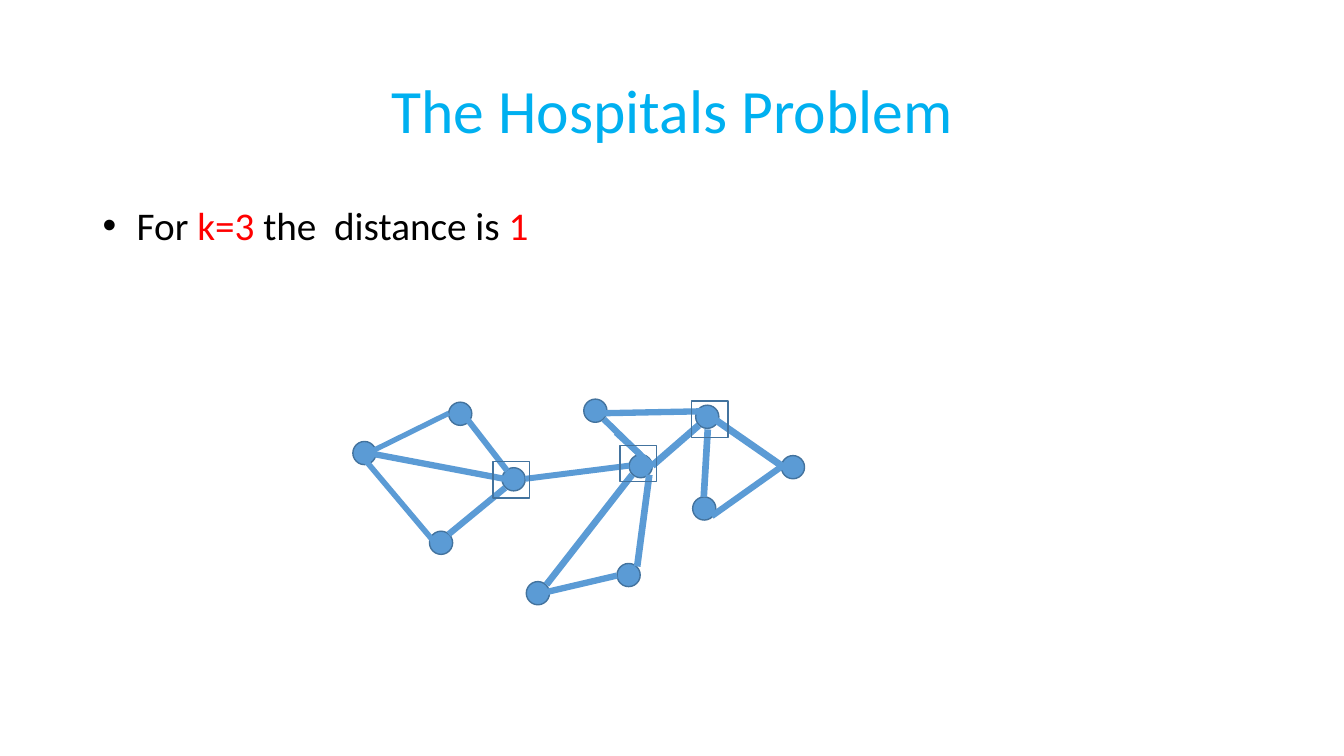
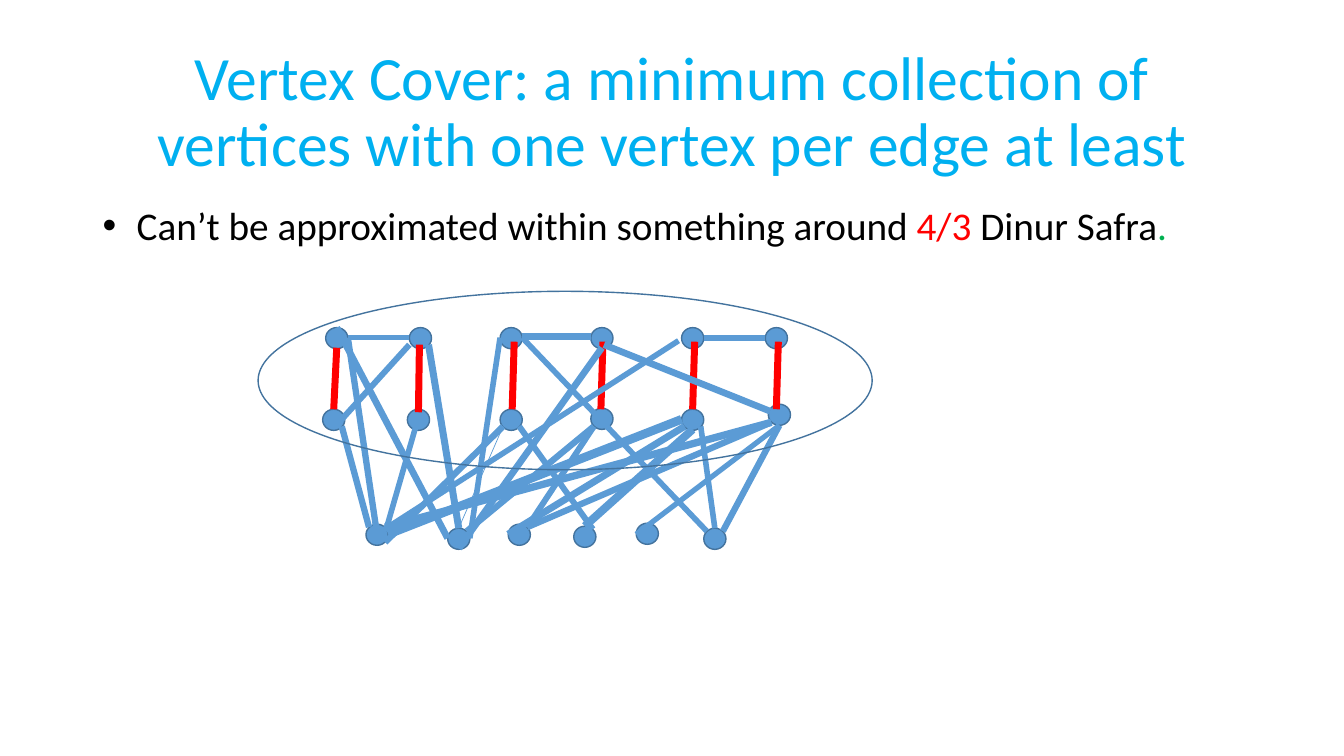
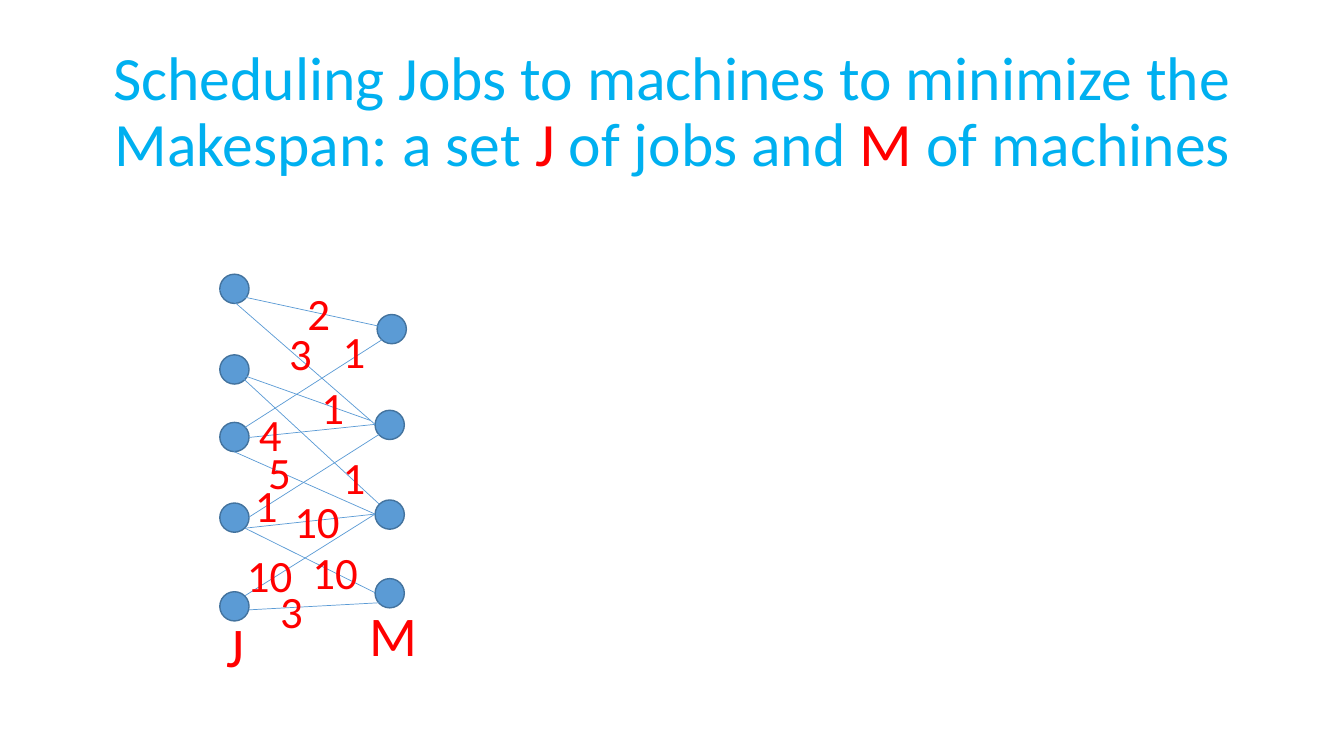
from lxml import etree
from pptx import Presentation, util as u
from pptx.dml import color
from pptx.enum import shapes, text
from pptx.oxml import ns

COLS, ROWS = 1333, 750
WIDTH, HEIGHT = u.Inches(13.33), u.Inches(7.5)
FONT = "Calibri"
SKY, RED, GREEN, BLACK = "00B0F0", "FF0000", "00B050", "000000"
BLUE, NAVY = "5B9BD5", "43739E"
CONTENT_LEFT, CONTENT_WIDTH = 92, 1150
LABEL_WIDTH = 372

HOSPITAL_NODES = [(350, 438), (445, 399), (426, 527), (498, 464), (579, 396), (612, 559),
                  (690, 402), (687, 493), (624, 451), (775, 452), (522, 577)]
HOSPITAL_SITES = [(686, 398), (489, 458), (615, 442)]
HOSPITAL_EDGES = [
    (362, 451, 445, 410, 3.75), (361, 455, 436, 544, 4), (462, 414, 503, 467, 4.25),
    (445, 530, 501, 484, 4.5), (363, 449, 500, 475, 4.5), (627, 471, 542, 580, 4.75),
    (644, 471, 632, 562, 4.75), (535, 589, 612, 571, 4.5), (706, 414, 778, 464, 5),
    (596, 410, 698, 408, 4.5), (706, 512, 775, 463, 4.5), (599, 416, 635, 451, 4.5),
    (647, 462, 693, 422, 5), (702, 426, 698, 493, 4.75), (521, 475, 624, 462, 4.25),
    (611, 429, 648, 463, 4.5)]

COVER_NODES = [(col, 325) for col in (323, 406, 496, 586, 676, 759)] + [
    (320, 406), (404, 406), (496, 406), (586, 405), (676, 406), (762, 401)]
OUTSIDE_NODES = [(363, 520), (444, 524), (504, 520), (569, 522), (631, 519), (698, 524)]
MATCHING = [(334, 345, 331, 406, 5), (415, 409, 416, 342, 5)] + [
    (col, 406, col + 2, 339, 5) for col in (508, 596, 687, 770)]
COVER_EDGES = [
    (366, 523, 339, 423, 4.5), (374, 530, 345, 335, 4.5), (382, 538, 499, 423, 4.5),
    (383, 525, 413, 421, 4), (385, 530, 676, 416, 6.25), (380, 526, 673, 338, 4),
    (382, 523, 765, 419, 5.25), (444, 534, 334, 325, 4.75), (455, 524, 425, 342, 5),
    (466, 534, 496, 335, 4), (455, 524, 499, 423, 0.5), (463, 527, 589, 423, 4.5),
    (455, 544, 597, 345, 4.75), (523, 523, 589, 423, 4.25), (504, 530, 679, 423, 5),
    (523, 523, 765, 419, 4.5), (588, 525, 515, 423, 4.25), (580, 522, 687, 426, 5.75),
    (701, 527, 518, 335, 4), (709, 524, 695, 423, 4), (717, 527, 773, 422, 4.5),
    (599, 342, 764, 408, 4.75), (339, 416, 406, 342, 4.25), (345, 335, 406, 335, 3.75),
    (518, 334, 586, 334, 5.25), (698, 335, 759, 335, 4.5), (631, 530, 773, 422, 3.75)]

JOBS = [(218, row) for row in (272, 352, 419, 499, 587)]
MACHINES = [(374, 312)] + [(372, row) for row in (407, 496, 574)]
JOB_EDGES = [(*ends, 0.5) for ends in (
    (239, 294, 387, 326), (243, 591, 372, 510), (232, 369, 367, 417), (243, 424, 379, 337),
    (247, 513, 376, 431), (232, 448, 372, 510), (247, 605, 376, 598), (243, 524, 372, 588),
    (247, 434, 372, 421), (218, 287, 372, 421), (232, 367, 376, 500), (243, 524, 372, 510))]
TIMES = [("2", 295, 279), ("3", 277, 318), ("1", 309, 372), ("4", 247, 399), ("1", 330, 316),
         ("1", 330, 441), ("5", 256, 436), ("1", 243, 469), ("10", 282, 485),
         ("10", 235, 538), ("10", 300, 536), ("3", 268, 574)]
SET_NAMES = [("J", 215, 602), ("M", 357, 591)]


def rgb(value):
    """Turn a hex string into a colour."""
    return color.RGBColor.from_string(value)


def grid(*cells):
    """Turn alternating columns and rows into slide lengths."""
    return [int(WIDTH * c / COLS) if i % 2 == 0 else int(HEIGHT * c / ROWS)
            for i, c in enumerate(cells)]


def add_text(s, cells, runs, size):
    """Add a wrapped text box with one paragraph of coloured runs."""
    tf = s.shapes.add_textbox(*grid(*cells)).text_frame
    tf.word_wrap = True
    p = tf.paragraphs[0]
    for words, hue in runs:
        r = p.add_run()
        r.text = words
        r.font.name, r.font.size = FONT, u.Pt(size)
        r.font.color.rgb = rgb(hue)
    return tf


def add_title(s, *runs):
    """Add the centred slide title."""
    tf = add_text(s, (CONTENT_LEFT, 40, CONTENT_WIDTH, 145), runs, 44)
    tf.vertical_anchor = text.MSO_ANCHOR.MIDDLE
    p = tf.paragraphs[0]
    p.alignment, p.line_spacing = text.PP_ALIGN.CENTER, 0.9


def add_bullet(s, *runs):
    """Add the body text as one bulleted paragraph."""
    tf = add_text(s, (CONTENT_LEFT, 200, CONTENT_WIDTH, 476), runs, 28)
    p = tf.paragraphs[0]
    p.line_spacing, p.space_before = 0.9, u.Pt(10)
    pPr = p._p.get_or_add_pPr()
    indent = u.Inches(0.25)
    pPr.set("marL", str(indent))
    pPr.set("indent", str(-indent))
    etree.SubElement(pPr, ns.qn("a:buFont")).set("typeface", "Arial")
    etree.SubElement(pPr, ns.qn("a:buChar")).set("char", "•")


def add_labels(s, labels, size, height):
    """Add red labels, each given as words, column and row."""
    for words, col, row in labels:
        tf = add_text(s, (col, row, LABEL_WIDTH, height), [(words, RED)], size)
        tf.auto_size = text.MSO_AUTO_SIZE.SHAPE_TO_FIT_TEXT


def add_outline(s, kind, cells, fill=None):
    """Add a navy-edged shape, filled only when a colour is given."""
    sp = s.shapes.add_shape(kind, *grid(*cells))
    sp.shadow.inherit = False
    sp.line.color.rgb, sp.line.width = rgb(NAVY), u.Pt(1)
    if fill:
        sp.fill.solid()
        sp.fill.fore_color.rgb = rgb(fill)
    else:
        sp.fill.background()


def add_nodes(s, corners, width, height):
    """Add equal graph vertices at the given corners."""
    for corner in corners:
        add_outline(s, shapes.MSO_SHAPE.OVAL, (*corner, width, height), BLUE)


def add_edges(s, edges, hue=BLUE):
    """Add graph edges, each given as two ends and a weight."""
    for *ends, weight in edges:
        cx = s.shapes.add_connector(shapes.MSO_CONNECTOR.STRAIGHT, *grid(*ends))
        cx.line.color.rgb, cx.line.width = rgb(hue), u.Pt(weight)
        etree.SubElement(cx._element.spPr, ns.qn("a:effectLst"))


def hospitals_slide(s):
    """Draw the hospitals graph with its three sites."""
    add_title(s, ("The Hospitals Problem", SKY))
    add_bullet(s, (" For ", BLACK), ("k=3", RED), (" the  distance is ", BLACK), ("1", RED))
    add_nodes(s, HOSPITAL_NODES, 23, 23)
    add_edges(s, HOSPITAL_EDGES)
    for site in HOSPITAL_SITES:
        add_outline(s, shapes.MSO_SHAPE.RECTANGLE, (*site, 36, 36))


def cover_slide(s):
    """Draw the matching and the vertex cover around it."""
    add_title(s, ("Vertex Cover: a minimum collection of vertices "
                  "with one vertex per edge at least", SKY))
    add_bullet(s, (" Can’t be approximated within something around ", BLACK), ("4/3 ", RED),
               ("Dinur Safra", BLACK), (".", GREEN))
    add_nodes(s, COVER_NODES, 22, 21)
    add_edges(s, MATCHING, RED)
    add_nodes(s, OUTSIDE_NODES, 22, 21)
    add_edges(s, COVER_EDGES)
    add_outline(s, shapes.MSO_SHAPE.OVAL, (256, 289, 609, 177))


def scheduling_slide(s):
    """Draw the jobs, the machines and the processing times."""
    add_title(s, ("Scheduling Jobs to machines to minimize the Makespan: a set ", SKY),
              ("J", RED), (" of jobs and ", SKY), ("M", RED), (" of machines", SKY))
    add_nodes(s, JOBS + MACHINES, 29, 29)
    add_edges(s, JOB_EDGES)
    add_labels(s, SET_NAMES, 40, 77)
    add_labels(s, TIMES, 32, 64)


def main():
    """Build and save the presentation."""
    prs = Presentation()
    prs.slide_width, prs.slide_height = WIDTH, HEIGHT
    for draw in (hospitals_slide, cover_slide, scheduling_slide):
        draw(prs.slides.add_slide(prs.slide_layouts[6]))
    prs.save("out.pptx")


if __name__ == "__main__":
    main()
